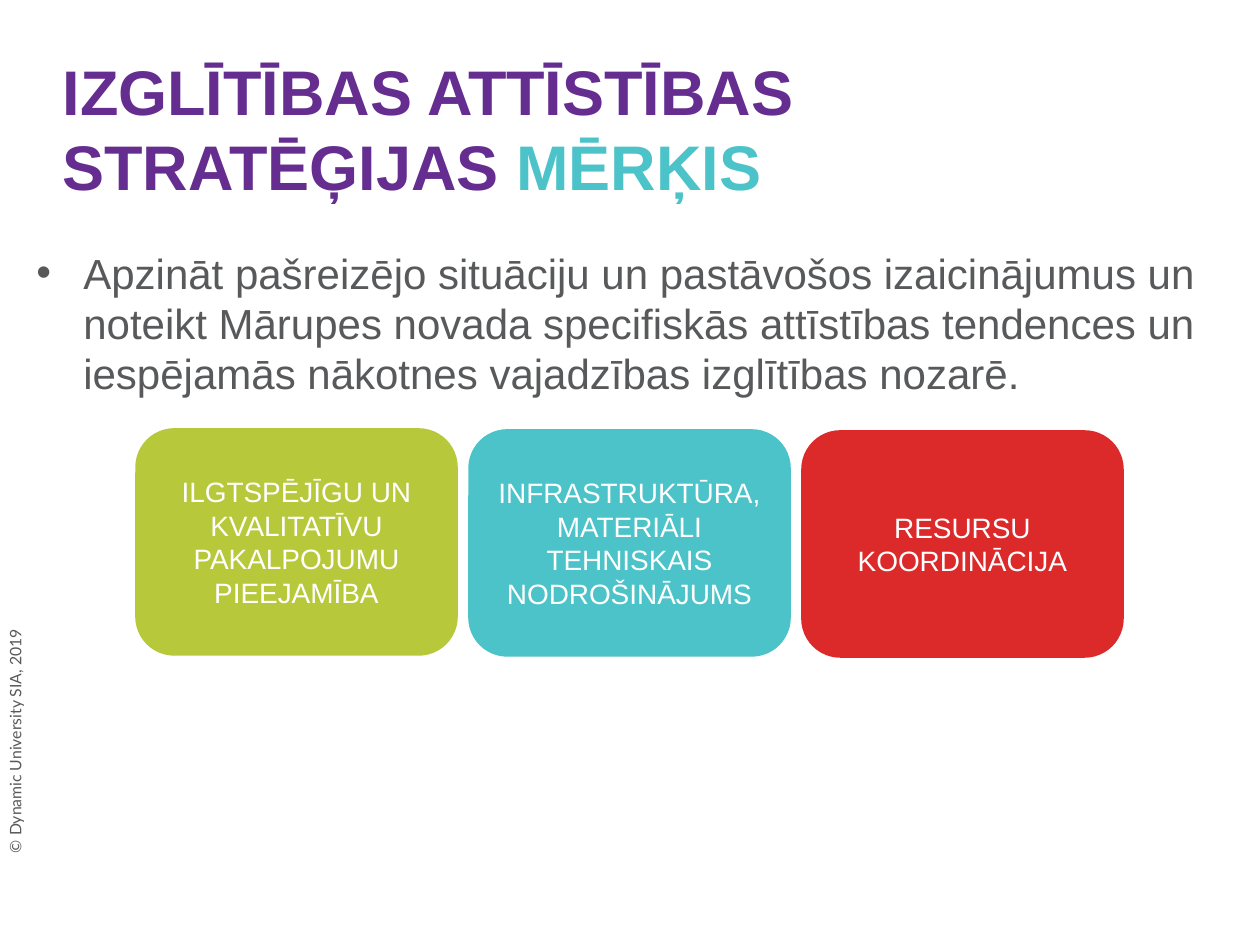
from pptx import Presentation
from pptx import util as u
from pptx.dml.color import RGBColor
from pptx.enum import shapes, text
from pptx.oxml.ns import qn
from lxml import etree

PX_PER_INCH = 126
PURPLE = RGBColor(0x66, 0x2D, 0x91)
TEAL = RGBColor(0x4B, 0xC3, 0xC9)
GREEN = RGBColor(0xB7, 0xC9, 0x3B)
RED = RGBColor(0xDC, 0x2A, 0x2B)
GREY = RGBColor(0x58, 0x59, 0x5B)
WHITE = RGBColor(0xFF, 0xFF, 0xFF)

PILLARS = [
    ("ILGTSPĒJĪGU UN KVALITATĪVU PAKALPOJUMU PIEEJAMĪBA", GREEN),
    ("INFRASTRUKTŪRA, MATERIĀLI TEHNISKAIS NODROŠINĀJUMS", TEAL),
    ("RESURSU KOORDINĀCIJA", RED),
]


def px(length):
    return u.Emu(round(length * u.Inches(1) / PX_PER_INCH))


def set_font(paragraph, size, color, name="Arial"):
    font = paragraph.font
    font.name, font.size = name, u.Pt(size)
    font.color.rgb = color


def add_title(slide, left, top, width, height):
    title = slide.shapes.title
    title.left, title.top = px(left), px(top)
    title.width, title.height = px(width), px(height)
    frame = title.text_frame
    frame.auto_size = text.MSO_AUTO_SIZE.NONE
    frame.word_wrap = True
    frame.vertical_anchor = text.MSO_ANCHOR.MIDDLE
    heading = frame.paragraphs[0]
    heading.alignment = text.PP_ALIGN.LEFT
    set_font(heading, 36, PURPLE)
    heading.font.bold = True
    heading.add_run().text = "IZGLĪTĪBAS ATTĪSTĪBAS STRATĒĢIJAS "
    keyword = heading.add_run()
    keyword.text = "MĒRĶIS"
    keyword.font.color.rgb = TEAL


def add_goal(slide, left, top, width, height):
    box = slide.shapes.add_textbox(px(left), px(top), px(width), px(height))
    box.text_frame.word_wrap = True
    goal = box.text_frame.paragraphs[0]
    goal.text = ("Apzināt pašreizējo situāciju un pastāvošos izaicinājumus un "
                 "noteikt Mārupes novada specifiskās attīstības tendences un "
                 "iespējamās nākotnes vajadzības izglītības nozarē.")
    properties = goal._p.get_or_add_pPr()
    indent = px(47)
    properties.set("marL", str(indent))
    properties.set("indent", str(-indent))
    etree.SubElement(properties, qn("a:buFont"), typeface="Arial")
    etree.SubElement(properties, qn("a:buChar"), char="•")
    set_font(goal, 24, GREY)


def add_pillars(slide, left, top, card_width, card_height, gap, drop):
    """Row of cards, each one set lower than the one before by drop."""
    for column, (label, color) in enumerate(PILLARS):
        card = slide.shapes.add_shape(
            shapes.MSO_SHAPE.ROUNDED_RECTANGLE,
            px(left + column * (card_width + gap)), px(top + column * drop),
            px(card_width), px(card_height))
        card.shadow.inherit = False
        card.fill.solid()
        card.fill.fore_color.rgb = color
        card.line.color.rgb = color
        card.line.width = u.Pt(2)
        frame = card.text_frame
        frame.word_wrap = True
        frame.vertical_anchor = text.MSO_ANCHOR.MIDDLE
        caption = frame.paragraphs[0]
        caption.text = label
        caption.alignment = text.PP_ALIGN.CENTER
        set_font(caption, 16, WHITE)


def add_copyright(slide, left, top, width, height):
    box = slide.shapes.add_textbox(px(left), px(top), px(width), px(height))
    box.rotation = 270
    box.text_frame.word_wrap = True
    notice = box.text_frame.paragraphs[0]
    notice.text = "© Dynamic University SIA, 2019"
    set_font(notice, 9, GREY, "Lato")


def main():
    deck = Presentation()
    deck.slide_width, deck.slide_height = px(1260), px(945)
    slide = deck.slides.add_slide(deck.slide_layouts[5])
    add_copyright(slide, -246, 588, 523, 32)
    add_title(slide, 50, 49, 839, 158)
    add_goal(slide, 24, 241, 1196, 543)
    add_pillars(slide, 137, 430, 319, 224, gap=14, drop=1)
    deck.save("out.pptx")


if __name__ == "__main__":
    main()
